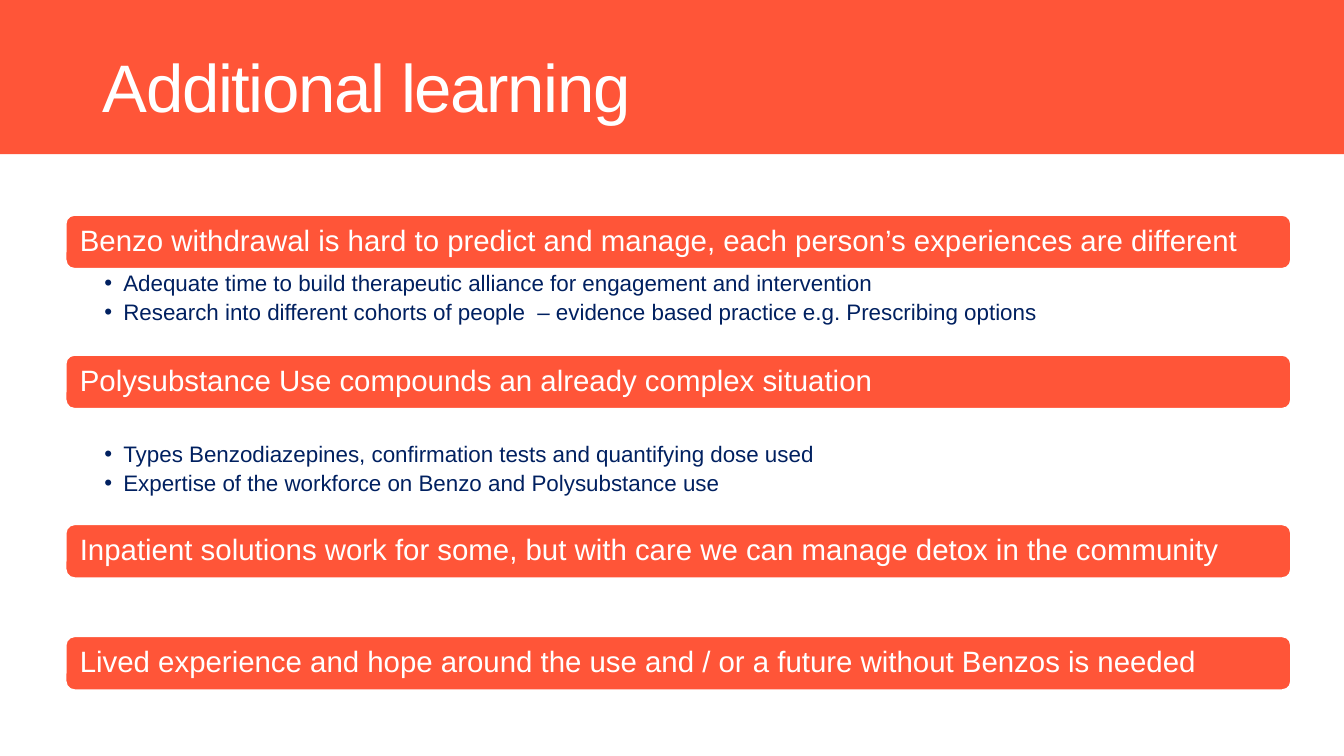
from lxml.etree import SubElement
from pptx import Presentation
from pptx.dml.color import RGBColor
from pptx.enum.shapes import MSO_SHAPE
from pptx.enum.text import MSO_ANCHOR, MSO_AUTO_SIZE, PP_ALIGN
from pptx.oxml.ns import qn
from pptx.util import Pt

ORANGE = RGBColor(0xFF, 0x55, 0x38)
NAVY = RGBColor(0x00, 0x20, 0x60)
WHITE = RGBColor(0xFF, 0xFF, 0xFF)

SLIDE_WIDTH, SLIDE_HEIGHT = 960, 540
LEFT, WIDTH = 46.8, 875.5
FIRST_TOP, BAR_HEIGHT = 153.4, 38.7

SECTIONS = [
    ("Benzo withdrawal is hard to predict and manage, each person’s experiences are different",
     ["Adequate time to build therapeutic alliance for engagement and intervention",
      "Research into different cohorts of people  – evidence based practice e.g. Prescribing options"],
     0, 61.3),
    ("Polysubstance Use compounds an already complex situation",
     ["Types Benzodiazepines, confirmation tests and quantifying dose used",
      "Expertise of the workforce on Benzo and Polysubstance use"],
     22, 82.3),
    ("Inpatient solutions work for some, but with care we can manage detox in the community",
     [], 0, 41.3),
    ("Lived experience and hope around the use and / or a future without Benzos is needed",
     [], 0, 0),
]


def apply(target, values):
    for name, value in values.items():
        setattr(target, name, value)


class LearningSlide:
    frame_format = {"word_wrap": True, "auto_size": MSO_AUTO_SIZE.NONE}
    paragraph_format = {"alignment": PP_ALIGN.LEFT, "line_spacing": 0.9, "space_before": Pt(0)}
    title_font = {"name": "Arial", "size": Pt(48)}
    bar_font = {"name": "Arial", "size": Pt(21)}
    list_font = {"name": "Arial", "size": Pt(16)}

    def __init__(self, presentation):
        self.slide = presentation.slides.add_slide(presentation.slide_layouts[3])

    def place(self, shape, left, top, width, height):
        apply(shape, {"left": Pt(left), "top": Pt(top), "width": Pt(width), "height": Pt(height)})

    def frame(self, shape, anchor, margins):
        sides = ("margin_left", "margin_top", "margin_right", "margin_bottom")
        apply(shape.text_frame, {**self.frame_format, "vertical_anchor": anchor,
                                 **dict(zip(sides, map(Pt, margins)))})
        return shape.text_frame

    def fill_text(self, paragraph, text, font, color):
        apply(paragraph, self.paragraph_format)
        run = paragraph.add_run()
        run.text = text
        apply(run.font, font)
        run.font.color.rgb = color
        return run

    def box(self, kind, left, top, width, height):
        shape = self.slide.shapes.add_shape(kind, Pt(left), Pt(top), Pt(width), Pt(height))
        shape.shadow.inherit = False
        shape.fill.solid()
        shape.fill.fore_color.rgb = ORANGE
        return shape

    def band(self, height):
        shape = self.box(MSO_SHAPE.RECTANGLE, 0, 0, SLIDE_WIDTH, height)
        shape.line.fill.background()
        shape.element.getparent().insert(2, shape.element)

    def title(self, text):
        shape = self.slide.shapes.title
        self.place(shape, 66.2, 19.4, 846.7, 90.7)
        frame = self.frame(shape, MSO_ANCHOR.MIDDLE, (7.2, 3.6, 7.2, 3.6))
        run = self.fill_text(frame.paragraphs[0], text, self.title_font, WHITE)
        run.font._element.set("spc", "-100")

    def bar(self, text, top):
        shape = self.box(MSO_SHAPE.ROUNDED_RECTANGLE, LEFT, top, WIDTH, BAR_HEIGHT)
        shape.line.color.rgb = WHITE
        shape.line.width = Pt(1.5)
        frame = self.frame(shape, MSO_ANCHOR.MIDDLE, (8.4, 6.5, 8.4, 6.5))
        self.fill_text(frame.paragraphs[0], text, self.bar_font, WHITE)

    def bullets(self, shape, items, top, height):
        self.place(shape, LEFT, top, WIDTH, height)
        frame = self.frame(shape, MSO_ANCHOR.TOP, (27.8, 2.1, 11.5, 2.1))
        for index, item in enumerate(items):
            paragraph = frame.add_paragraph() if index else frame.paragraphs[0]
            paragraph.level = 1
            properties = paragraph._p.get_or_add_pPr()
            properties.set("marL", str(Pt(13.5)))
            properties.set("indent", str(-Pt(13.5)))
            SubElement(properties, qn("a:buFont"), typeface="Arial")
            SubElement(properties, qn("a:buChar"), char="•")
            paragraph.space_after = Pt(3.7)
            self.fill_text(paragraph, item, self.list_font, NAVY)


def main():
    presentation = Presentation()
    presentation.slide_width = Pt(SLIDE_WIDTH)
    presentation.slide_height = Pt(SLIDE_HEIGHT)
    page = LearningSlide(presentation)
    page.band(110.2)
    page.title("Additional learning")
    bodies = iter([page.slide.placeholders[1], page.slide.placeholders[2]])
    top = FIRST_TOP
    for heading, items, offset, gap in SECTIONS:
        page.bar(heading, top)
        top += BAR_HEIGHT
        if items:
            page.bullets(next(bodies), items, top + offset, gap - offset)
        top += gap
    presentation.save("out.pptx")


if __name__ == "__main__":
    main()
